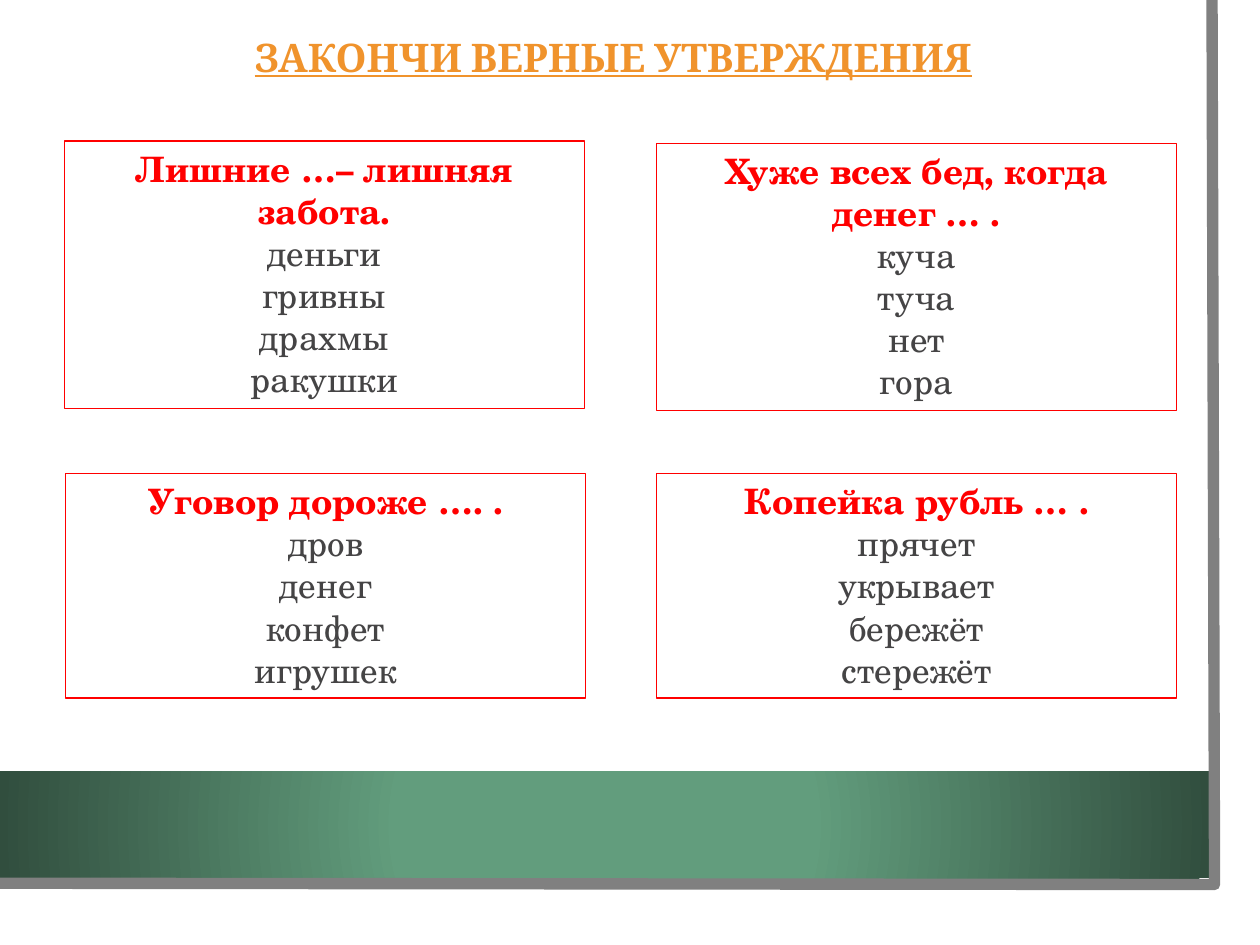
from dataclasses import dataclass

from lxml.etree import SubElement
from pptx import Presentation
from pptx.dml.color import RGBColor
from pptx.enum.shapes import MSO_SHAPE
from pptx.enum.text import MSO_ANCHOR, PP_ALIGN
from pptx.oxml import parse_xml
from pptx.oxml.ns import nsdecls, qn
from pptx.util import Inches, Pt


@dataclass(frozen=True)
class Theme:
    """Colours, fonts and type sizes of the slide."""
    accent: str = "F0932C"
    question: str = "FF0000"
    answer: str = "454445"
    frame: str = "808080"
    band_light: str = "629D7D"
    band_dark: str = "314E3E"
    title_font: str = "Cambria"
    body_font: str = "TeX Gyre Schola"
    title_size: float = 22.5
    body_size: float = 20
    frame_width: float = 6.5
    card_line: float = 0.75


class QuizSlide:
    """Draws quiz elements on a grid of 100 columns by 75 rows."""

    def __init__(self, presentation, theme):
        self.theme = theme
        self.unit = presentation.slide_width / 100
        self.slide = presentation.slides.add_slide(presentation.slide_layouts[6])

    def box(self, *cells):
        """Turns grid cells into lengths."""
        return [round(cell * self.unit) for cell in cells]

    def rectangle(self, *cells):
        """Adds a rectangle without fill, line or shadow."""
        shape = self.slide.shapes.add_shape(MSO_SHAPE.RECTANGLE, *self.box(*cells))
        shape.shadow.inherit = False
        shape.fill.background()
        shape.line.fill.background()
        return shape

    def band(self, *cells):
        """Adds the band with its round gradient."""
        properties = self.rectangle(*cells).element.spPr
        gradient = parse_xml(f'<a:gradFill {nsdecls("a")} rotWithShape="1"/>')
        stops = SubElement(gradient, qn("a:gsLst"))
        light, dark = self.theme.band_light, self.theme.band_dark
        for position, colour in ((0, light), (34000, light), (100000, dark)):
            stop = SubElement(stops, qn("a:gs"), pos=str(position))
            SubElement(stop, qn("a:srgbClr"), val=colour)
        circle = SubElement(gradient, qn("a:path"), path="circle")
        SubElement(circle, qn("a:fillToRect"), l="50000", t="50000", r="50000", b="50000")
        properties.replace(properties.find(qn("a:noFill")), gradient)

    def frame(self, start, *corners):
        """Adds the open frame line through the given corners."""
        builder = self.slide.shapes.build_freeform(*self.box(*start))
        builder.add_line_segments([self.box(*corner) for corner in corners], close=False)
        shape = builder.convert_to_shape()
        shape.shadow.inherit = False
        shape.fill.background()
        shape.line.color.rgb = RGBColor.from_string(self.theme.frame)
        shape.line.width = Pt(self.theme.frame_width)

    def set_text(self, paragraph, text, font, size, colour, bold):
        """Fills and styles one centred paragraph."""
        paragraph.text = text
        paragraph.alignment = PP_ALIGN.CENTER
        paragraph.font.name = font
        paragraph.font.size = Pt(size)
        paragraph.font.bold = bold
        paragraph.font.color.rgb = RGBColor.from_string(colour)

    def title(self, text, *cells):
        """Adds the underlined title."""
        frame = self.slide.shapes.add_textbox(*self.box(*cells)).text_frame
        frame.word_wrap = True
        frame.vertical_anchor = MSO_ANCHOR.MIDDLE
        paragraph = frame.paragraphs[0]
        self.set_text(paragraph, text, self.theme.title_font, self.theme.title_size,
                      self.theme.accent, True)
        paragraph.font.underline = True

    def card(self, question, answers, *cells):
        """Adds an outlined card with a question and its answers."""
        theme = self.theme
        shape = self.rectangle(*cells)
        shape.line.color.rgb = RGBColor.from_string(theme.question)
        shape.line.width = Pt(theme.card_line)
        frame = shape.text_frame
        frame.word_wrap = True
        frame.vertical_anchor = MSO_ANCHOR.TOP
        self.set_text(frame.paragraphs[0], question, theme.body_font, theme.body_size,
                      theme.question, True)
        for answer in answers:
            self.set_text(frame.add_paragraph(), answer, theme.body_font, theme.body_size,
                          theme.answer, False)


CARDS = [
    ("Лишние …– лишняя забота.", "деньги гривны драхмы ракушки", 5.1, 11.2, 21.2),
    ("Хуже всех бед, когда денег … .", "куча туча нет гора", 52.1, 11.4, 21.2),
    ("Уговор дороже …. .", "дров денег конфет игрушек", 5.2, 37.6, 17.8),
    ("Копейка рубль … .", "прячет укрывает бережёт стережёт", 52.1, 37.6, 17.8),
]
CARD_WIDTH = 41.3


def main():
    """Builds the quiz slide and saves it."""
    presentation = Presentation()
    presentation.slide_width, presentation.slide_height = Inches(10), Inches(7.5)
    quiz = QuizSlide(presentation, Theme())
    quiz.band(0, 61.2, 96, 8.5)
    quiz.frame((96.2, 0), (96.4, 70.2), (-0.2, 70.1))
    quiz.title("ЗАКОНЧИ ВЕРНЫЕ УТВЕРЖДЕНИЯ", 3.7, 2, 90, 5)
    for question, answers, left, top, height in CARDS:
        quiz.card(question, answers.split(), left, top, CARD_WIDTH, height)
    presentation.save("out.pptx")


if __name__ == "__main__":
    main()
